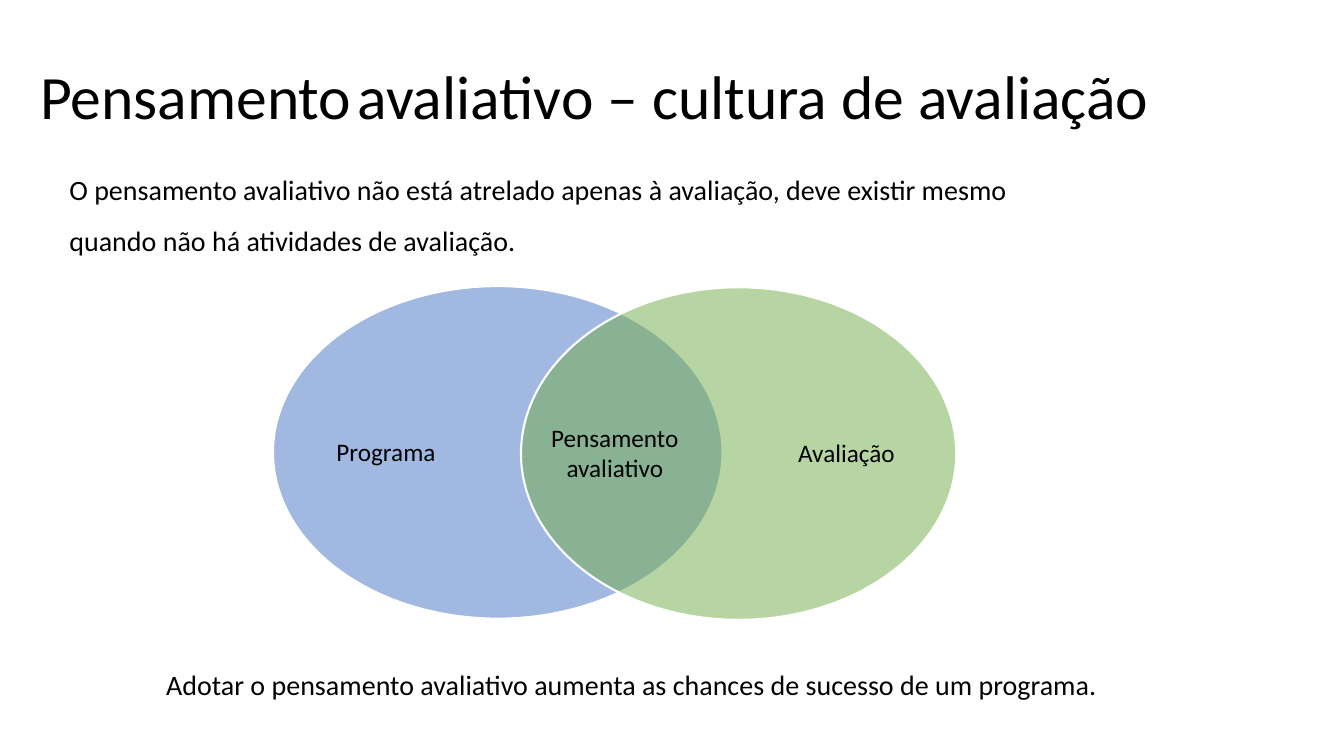
from lxml import etree
from pptx import Presentation, util as u
from pptx.dml.color import RGBColor
from pptx.enum import shapes, text
from pptx.oxml.ns import qn

LEFT, CENTER, RIGHT = text.PP_ALIGN.LEFT, text.PP_ALIGN.CENTER, text.PP_ALIGN.RIGHT
TOP, MIDDLE = text.MSO_ANCHOR.TOP, text.MSO_ANCHOR.MIDDLE


def rgb(value):
    return RGBColor.from_string(value)


def cm(*lengths):
    return [u.Cm(length) for length in lengths]


class SlideBuilder:
    """Holds the style and the current slide."""
    font, ink, outline = "Calibri", "000000", "FFFFFF"

    def __init__(self, prs):
        self.s = prs.slides.add_slide(prs.slide_layouts[5])

    def fill_text(self, sp, runs, anchor=TOP, inset=None, **para):
        tf = sp.text_frame
        frame = {"word_wrap": True, "auto_size": text.MSO_AUTO_SIZE.NONE,
                 "vertical_anchor": anchor}
        if inset is not None:
            sides = ("left", "top", "right", "bottom")
            frame.update({f"margin_{side}": u.Cm(inset) for side in sides})
        for name, value in frame.items():
            setattr(tf, name, value)
        p = tf.paragraphs[0]
        for name, value in para.items():
            setattr(p, name, value)
        for words, size in runs:
            r = p.add_run()
            r.text = words
            for name, value in {"name": self.font, "size": u.Pt(size)}.items():
                setattr(r.font, name, value)
            r.font.color.rgb = rgb(self.ink)

    def title(self, box, runs):
        sp = self.s.shapes.title
        for name, value in zip(("left", "top", "width", "height"), cm(*box)):
            setattr(sp, name, value)
        self.fill_text(sp, runs, alignment=LEFT)

    def textbox(self, box, words, size, **style):
        sp = self.s.shapes.add_textbox(*cm(*box))
        self.fill_text(sp, [(words, size)], **style)

    def ellipse(self, box, color, opacity):
        sp = self.s.shapes.add_shape(shapes.MSO_SHAPE.OVAL, *cm(*box))
        sp.shadow.inherit = False
        sp.fill.solid()
        sp.fill.fore_color.rgb = rgb(color)
        fill = sp.element.spPr.find(qn("a:solidFill"))
        etree.SubElement(fill[0], qn("a:alpha"), val=str(opacity * 1000))
        sp.line.color.rgb = rgb(self.outline)
        sp.line.width = u.Pt(1.5)


def main():
    prs = Presentation()
    prs.slide_width, prs.slide_height = cm(33.87, 19.05)
    slide = SlideBuilder(prs)

    # Title and statements
    slide.title((0.76, 1.32, 29.46, 2.13),
                [("Pensamento", 44), (" ", 18),
                 ("avaliativo – cultura de avaliação", 44)])
    slide.textbox((1.5, 3.81, 25.32, 2.82),
                  "O pensamento avaliativo não está atrelado apenas à avaliação, "
                  "deve existir mesmo quando não há atividades de avaliação.",
                  20, line_spacing=1.5, space_after=u.Pt(12))
    slide.textbox((3.94, 16.69, 27.94, 1.12),
                  "Adotar o pensamento avaliativo aumenta as chances de sucesso "
                  "de um programa.", 20, space_after=u.Pt(12))

    # Venn diagram: ellipse, colour, label box, label, alignment
    sets = [
        ((6.88, 7.21, 11.33, 8.38), "4472C4",
         (8.48, 8.2, 6.53, 6.43), "Programa", LEFT),
        ((13.13, 7.24, 10.97, 8.38), "70AD47",
         (16.23, 8.23, 6.32, 6.43), "Avaliação", RIGHT),
    ]
    for oval, color, box, label, align in sets:
        slide.ellipse(oval, color, 50)
        slide.textbox(box, label, 18, anchor=MIDDLE, inset=0,
                      alignment=align, line_spacing=0.9)

    # Overlap label
    slide.textbox((13.44, 10.52, 4.11, 1.8), "Pensamento avaliativo", 18,
                  alignment=CENTER)

    prs.save("out.pptx")


if __name__ == "__main__":
    main()
